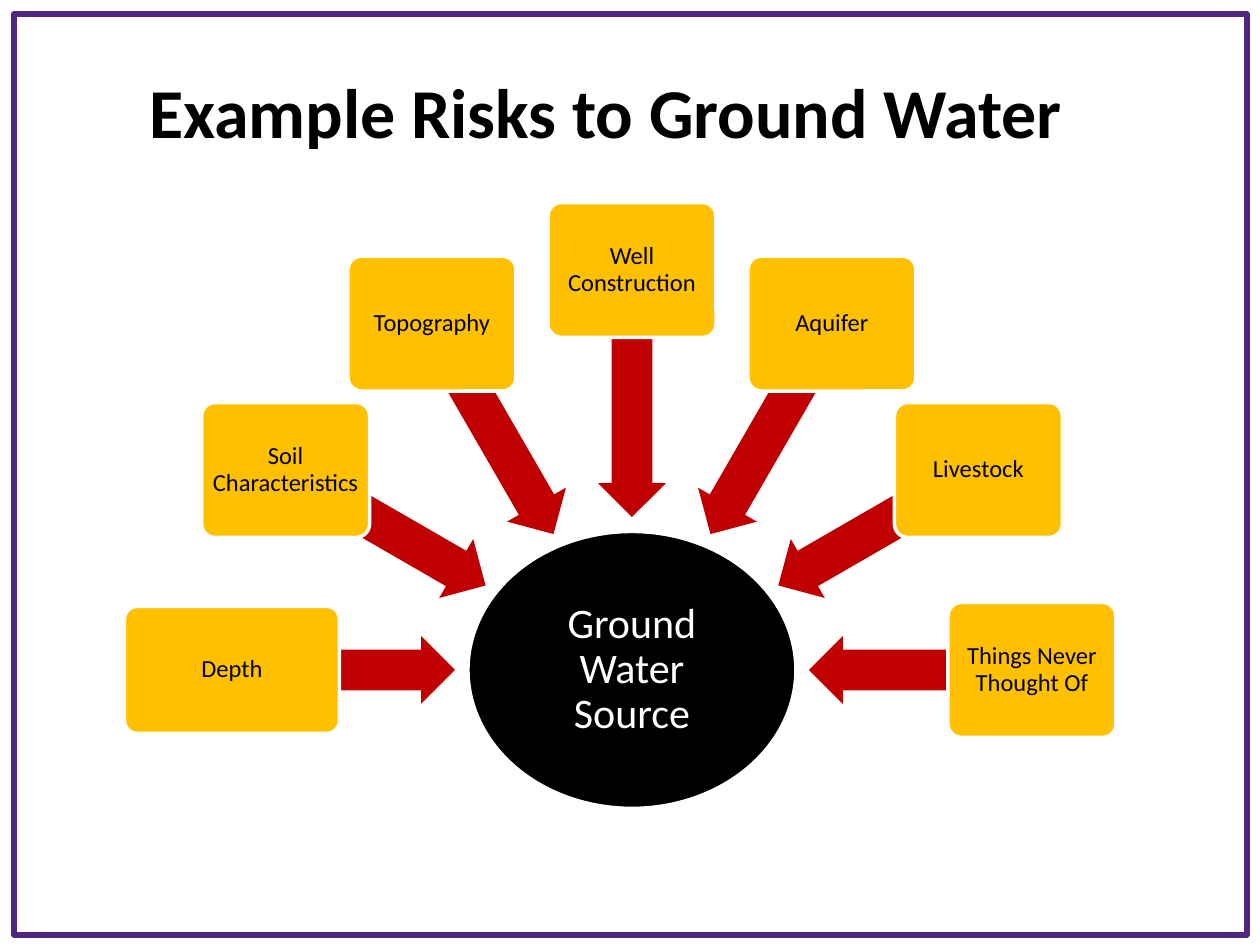
from math import cos, radians, sin

from pptx import Presentation
from pptx import util as u
from pptx.dml.color import RGBColor
from pptx.enum import shapes, text

PX = u.Inches(1) // 126
KIND = shapes.MSO_SHAPE


class Theme:
    font = "Calibri"
    ink, paper, frame = "000000", "FFFFFF", "4F2782"
    card, arrow = "FFC000", "C00000"
    title, hub, label = 40, 24, 14


# Text, length of arrow, size of card; from left to right around the hub
RISKS = [
    ("Depth", 223, (215, 127)),
    ("Soil Characteristics", 231, (168, 135)),
    ("Topography", 243, (168, 135)),
    ("Well Construction", 247, (168, 135)),
    ("Aquifer", 243, (168, 135)),
    ("Livestock", 231, (168, 135)),
    ("Things Never Thought Of", 223, (168, 135)),
]


def write(shape, words, size, color=Theme.ink, bold=False, align="CENTER",
          anchor="MIDDLE", inset=(4, 4), spacing=0.9):
    frame = shape.text_frame
    frame.word_wrap = True
    frame.vertical_anchor = getattr(text.MSO_ANCHOR, anchor)
    frame.margin_left = frame.margin_right = inset[0] * PX
    frame.margin_top = frame.margin_bottom = inset[1] * PX
    para = frame.paragraphs[0]
    para.alignment = getattr(text.PP_ALIGN, align)
    para.line_spacing = spacing
    run = para.add_run()
    run.text = words
    run.font.name, run.font.size, run.font.bold = Theme.font, u.Pt(size), bold
    run.font.color.rgb = RGBColor.from_string(color)


def draw(slide, kind, box, fill=None, line=None, width=2):
    shape = slide.shapes.add_shape(kind, *(round(n * PX) for n in box))
    shape.shadow.inherit = False
    if fill:
        shape.fill.solid()
        shape.fill.fore_color.rgb = RGBColor.from_string(fill)
    else:
        shape.fill.background()
    if line:
        shape.line.color.rgb = RGBColor.from_string(line)
        shape.line.width = u.Pt(width)
    else:
        shape.line.fill.background()
    return shape


def around(x, y, wide, high):
    """Box of the given size centred on a point."""
    return x - wide / 2, y - high / 2, wide, high


def add_title(slide, box, words):
    shape = slide.shapes.add_textbox(*(n * PX for n in box))
    write(shape, words, Theme.title, bold=True, align="LEFT", anchor="TOP",
          inset=(13, 6), spacing=1)


def add_spoke(slide, hub, angle, reach, risk):
    """Card at the given angle, with an arrow from its centre to the hub."""
    words, length, size = risk
    across, up = cos(radians(angle)), sin(radians(angle))

    def place(far):
        return hub[0] + far * across, hub[1] - far * up

    arrow = draw(slide, KIND.LEFT_ARROW,
                 around(*place(reach - length / 2), length, 68), Theme.arrow)
    arrow.adjustments[0], arrow.adjustments[1] = 0.6, 0.5
    arrow.rotation = -angle % 360
    card = draw(slide, KIND.ROUNDED_RECTANGLE, around(*place(reach), *size),
                Theme.card, Theme.paper)
    card.adjustments[0] = 0.1
    write(card, words, Theme.label)


def add_wheel(slide, box, words, risks):
    """Hub at the foot of the box, with the risks on a half circle over it."""
    left, top, wide, high = box
    reach = wide / 2
    hub = left + reach, top + high
    disc = draw(slide, KIND.OVAL, around(*hub, 328, 277),
                Theme.ink, Theme.paper)
    write(disc, words, Theme.hub, Theme.paper, inset=(3, 3))
    step = 180 / (len(risks) - 1)
    for i, risk in enumerate(risks):
        add_spoke(slide, hub, 180 - i * step, reach, risk)


def main():
    deck = Presentation()
    deck.slide_width, deck.slide_height = 1260 * PX, 945 * PX
    slide = deck.slides.add_slide(deck.slide_layouts[6])
    draw(slide, KIND.RECTANGLE, (14, 14, 1233, 921), line=Theme.frame, width=3)
    add_wheel(slide, (232, 270, 800, 400), "Ground Water Source", RISKS)
    add_title(slide, (136, 63, 993, 97), "Example Risks to Ground Water")
    deck.save("out.pptx")


if __name__ == "__main__":
    main()
